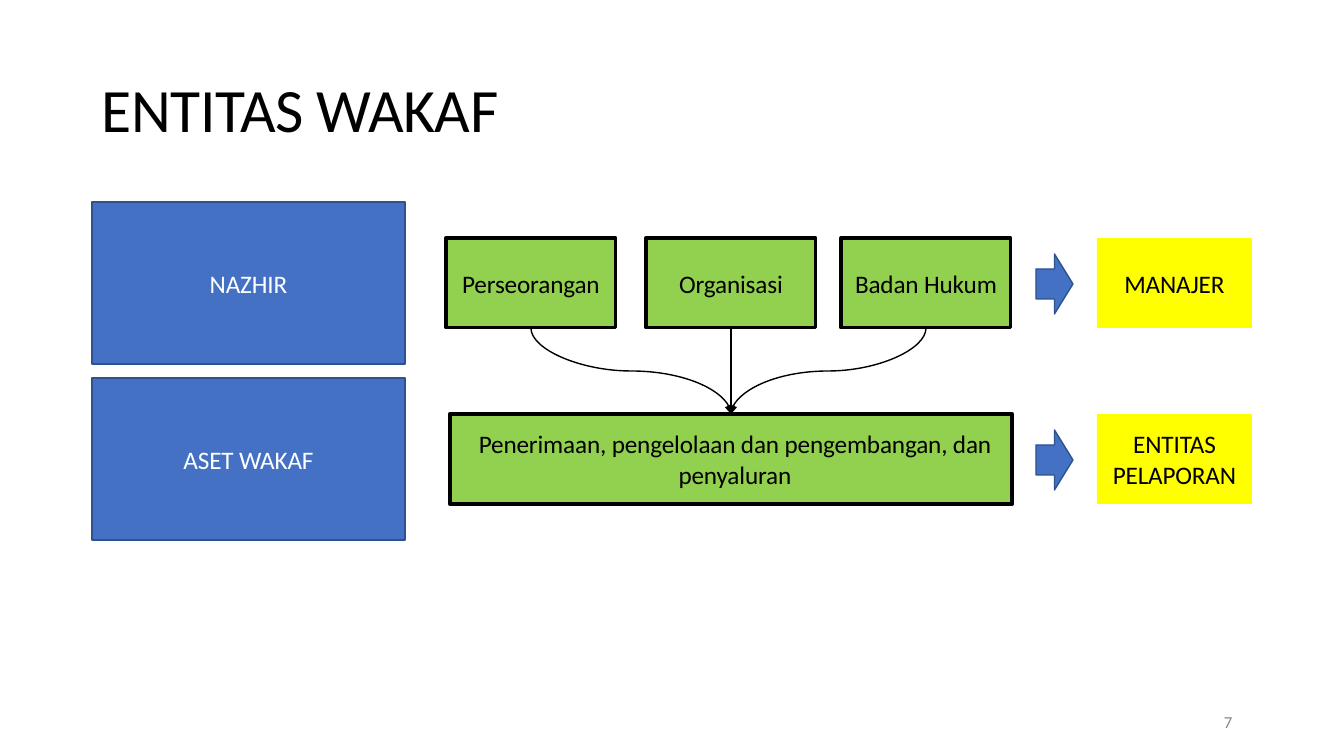
from pptx import Presentation
from pptx.dml.color import RGBColor
from pptx.enum.shapes import MSO_CONNECTOR, MSO_SHAPE
from pptx.enum.text import MSO_ANCHOR, PP_ALIGN
from pptx.oxml.ns import qn
from pptx.util import Pt
from lxml import etree

PX = 9071.43
BLUE = RGBColor(0x44, 0x71, 0xC4)
NAVY = RGBColor(0x2E, 0x52, 0x8F)
GREEN = RGBColor(0x92, 0xD0, 0x50)
YELLOW = RGBColor(0xFF, 0xFF, 0x00)
BLACK = RGBColor(0, 0, 0)
WHITE = RGBColor(0xFF, 0xFF, 0xFF)
GRAY = RGBColor(0x88, 0x88, 0x88)
RECTANGLE = MSO_SHAPE.RECTANGLE
RIGHT_ARROW = MSO_SHAPE.RIGHT_ARROW
STRAIGHT = MSO_CONNECTOR.STRAIGHT
CURVE = MSO_CONNECTOR.CURVE
MIDDLE = MSO_ANCHOR.MIDDLE
CENTER = PP_ALIGN.CENTER
LEFT = PP_ALIGN.LEFT

presentation = Presentation()
presentation.slide_width = round(1344 * PX)
presentation.slide_height = round(756 * PX)
slide = presentation.slides.add_slide(presentation.slide_layouts[6])


def write(shape, text, size, color, alignment, inset=0, spacing=-10):
    frame = shape.text_frame
    frame.word_wrap = True
    frame.vertical_anchor = MIDDLE
    frame.margin_left = round(inset * PX)
    frame.margin_right = frame.margin_top = frame.margin_bottom = 0
    frame.text = text
    paragraph = frame.paragraphs[0]
    paragraph.alignment = alignment
    run = paragraph.runs[0]
    run.font.name = "Calibri"
    run.font.size = Pt(size)
    run.font.color.rgb = color
    run.font._element.set("spc", str(spacing))
    return paragraph


def add_block(kind, box, fill, line_color=None, line_width=1):
    shape = slide.shapes.add_shape(kind, *(round(length * PX) for length in box))
    shape.shadow.inherit = False
    shape.fill.solid()
    shape.fill.fore_color.rgb = fill
    if line_color is None:
        shape.line.fill.background()
    else:
        shape.line.color.rgb = line_color
        shape.line.width = Pt(line_width)
    return shape


title = slide.shapes.add_textbox(*(round(length * PX) for length in (92, 40, 1160, 146)))
write(title, "ENTITAS WAKAF", 44, BLACK, LEFT, 10, -35).line_spacing = 0.9

rows = [("NAZHIR", "MANAJER"), ("ASET WAKAF", "ENTITAS PELAPORAN")]
for index, (subject, role) in enumerate(rows):
    offset = index * 176
    subject_box = add_block(RECTANGLE, (92, 202 + offset, 313, 162), BLUE, NAVY)
    write(subject_box, subject, 18, WHITE, CENTER)
    add_block(RIGHT_ARROW, (1036, 254 + offset, 37, 60), BLUE, NAVY)
    role_box = add_block(RECTANGLE, (1097, 238 + offset, 155, 90), YELLOW)
    write(role_box, role, 18, BLACK, CENTER)

activity_box = add_block(RECTANGLE, (450, 414, 562, 90), GREEN, BLACK, 3)
write(activity_box, "Penerimaan, pengelolaan dan pengembangan, dan penyaluran", 18, BLACK, CENTER, 8)

target_x, target_y, source_y = 731, 414, 328
for left, name in [(446, "Perseorangan"), (646, "Organisasi"), (841, "Badan Hukum")]:
    nazhir_box = add_block(RECTANGLE, (left, 238, 170, 90), GREEN, BLACK, 2.25)
    write(nazhir_box, name, 18, BLACK, CENTER)
    source_x = left + 85
    if source_x == target_x:
        connector = slide.shapes.add_connector(STRAIGHT, 0, 0, 0, 0)
        connector.begin_connect(nazhir_box, 2)
        connector.end_connect(activity_box, 0)
    else:
        middle_x, middle_y = (source_x + target_x) / 2, (source_y + target_y) / 2
        half_width, half_height = abs(target_x - source_x) / 2, (target_y - source_y) / 2
        direction = 1 if source_x > target_x else -1
        ends = (middle_x - direction * half_height, middle_y - half_width,
                middle_x + direction * half_height, middle_y + half_width)
        connector = slide.shapes.add_connector(CURVE, *(round(length * PX) for length in ends))
        rotation = 5400000 if direction == 1 else 16200000
        connector._element.spPr.find(qn("a:xfrm")).set("rot", str(rotation))
    connector.line.color.rgb = BLACK
    connector.line.width = Pt(1)
    etree.SubElement(connector.line._get_or_add_ln(), qn("a:tailEnd"), type="triangle")
    etree.SubElement(connector._element.spPr, qn("a:effectLst"))

number = slide.shapes.add_textbox(*(round(length * PX) for length in (1220, 712, 25, 19)))
write(number, "7", 12, GRAY, LEFT, 4, 0)

presentation.save("out.pptx")
